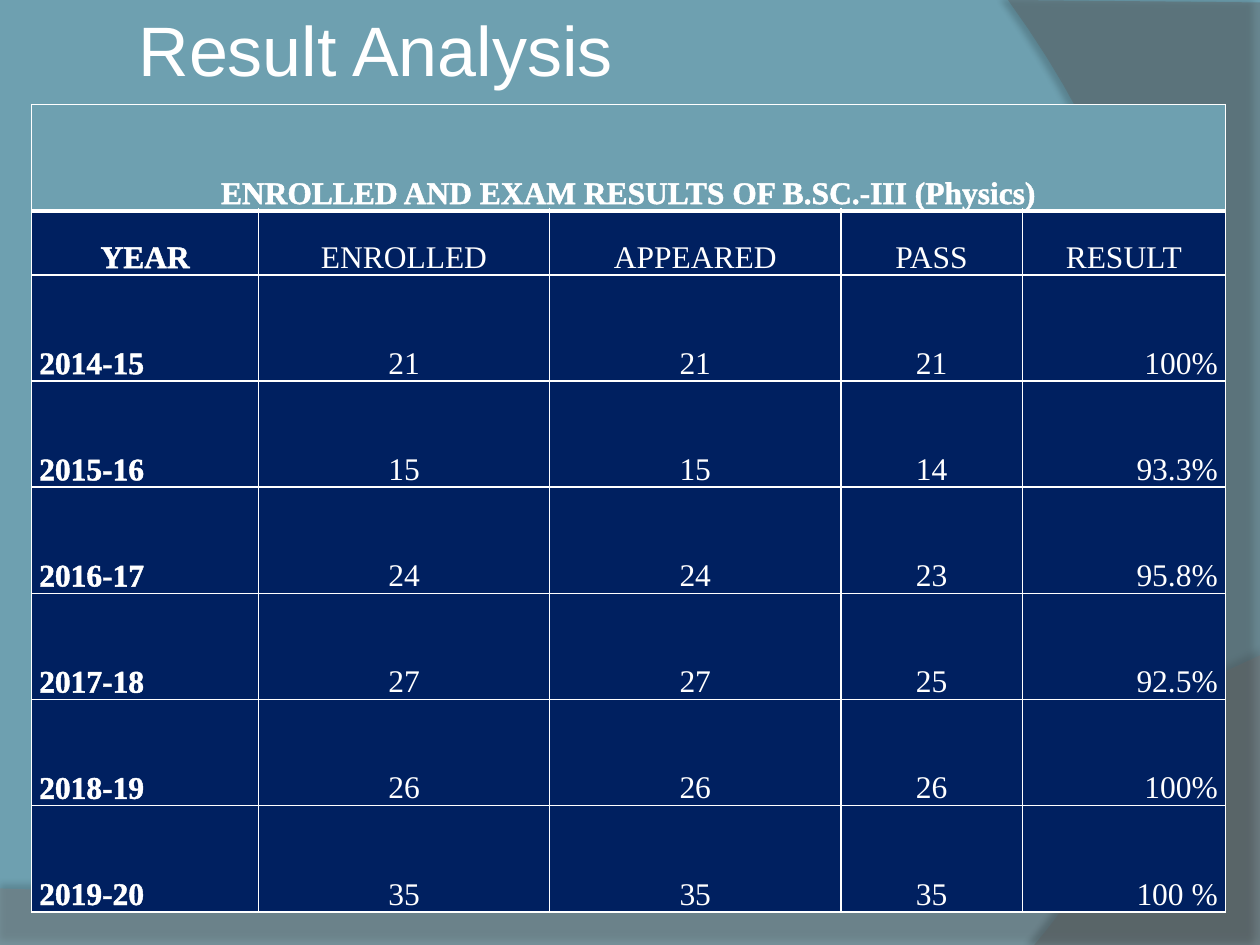
from lxml import etree
from pptx import Presentation
from pptx.dml.color import RGBColor
from pptx.enum.text import MSO_ANCHOR, MSO_AUTO_SIZE, PP_ALIGN
from pptx.oxml.ns import qn
from pptx.util import Cm, Pt

LEFT, CENTER, RIGHT = PP_ALIGN.LEFT, PP_ALIGN.CENTER, PP_ALIGN.RIGHT
TOP, BOTTOM = MSO_ANCHOR.TOP, MSO_ANCHOR.BOTTOM
NO_AUTOFIT = MSO_AUTO_SIZE.NONE
TITLE_ONLY = 5

# Content
TITLE = "Result Analysis"
CAPTION = "ENROLLED AND EXAM RESULTS OF B.SC.-III (Physics)"
HEADINGS = ["YEAR", "ENROLLED", "APPEARED", "PASS", "RESULT"]
RESULTS = [
    ["2014-15", "21", "21", "21", "100%"],
    ["2015-16", "15", "15", "14", "93.3%"],
    ["2016-17", "24", "24", "23", "95.8%"],
    ["2017-18", "27", "27", "25", "92.5%"],
    ["2018-19", "26", "26", "26", "100%"],
    ["2019-20", "35", "35", "35", "100 %"],
]

THEME = {
    "background": "6EA0B0", "cell": "002060", "text": "FFFFFF", "shadow": "000000",
    "title_font": "Arial", "title_size": 40,
    "table_font": "Times New Roman", "table_size": 18,
    "border": 1, "caption_border": 3, "caption_outline": 0.75, "year_outline": 0.53,
}

# Geometry in cm
PAGE_WIDTH, PAGE_HEIGHT = 25.4, 19.05
TABLE_LEFT, TABLE_TOP = 0.64, 2.11
COLUMN_WIDTHS = [4.57, 5.87, 5.87, 3.66, 4.09]
ROW_HEIGHT, HEADING_HEIGHT = 2.14, 1.29
COLUMN_ALIGNMENT = [LEFT, CENTER, CENTER, CENTER, RIGHT]

# Background swooshes: straight corners, then a curve from the last corner
SWOOSHES = [
    {"corners": [(0, 17.91), (0, 19.05), (25.4, 19.05), (25.4, 13.21)],
     "curve": [(14.2, 18.52), (9.93, 18.26), (0, 17.91)],
     "color": "7F7F7F", "opacity": 45,
     "shadow": {"opacity": 35, "blur": 4, "distance": 3.5, "angle": 270}},
    {"corners": [(25.4, 0.05), (25.4, 19.05), (20.85, 19.05)],
     "curve": [(23.75, 15.72), (25.86, 7.62), (20.32, 0)],
     "color": "5E5E5E", "opacity": 40,
     "shadow": {"opacity": 45, "blur": 4, "distance": 4, "angle": 180}},
]
CURVE_STEPS = 40


def rgb(name):
    return RGBColor.from_string(THEME[name])


def child(parent, tag, **attributes):
    return etree.SubElement(parent, qn(tag), {key: str(value) for key, value in attributes.items()})


def set_opacity(color, percent):
    child(color, "a:alpha", val=percent * 1000)


def line_element(tag, points):
    line = etree.Element(qn(tag), {"w": str(Pt(points))})
    child(child(line, "a:solidFill"), "a:srgbClr", val=THEME["text"])
    return line


def bezier(start, first, second, end):
    for step in range(1, CURVE_STEPS + 1):
        t = step / CURVE_STEPS
        weights = ((1 - t) ** 3, 3 * t * (1 - t) ** 2, 3 * t * t * (1 - t), t ** 3)
        yield tuple(sum(weight * point[axis] for weight, point
                        in zip(weights, (start, first, second, end))) for axis in (0, 1))


def add_swoosh(slide, swoosh):
    corners = swoosh["corners"]
    points = corners + list(bezier(corners[-1], *swoosh["curve"]))
    points = [(Cm(x), Cm(y)) for x, y in points]
    builder = slide.shapes.build_freeform(*points[0])
    builder.add_line_segments(points[1:], close=True)
    shape = builder.convert_to_shape()
    shape.fill.solid()
    shape.fill.fore_color.rgb = RGBColor.from_string(swoosh["color"])
    shape.line.fill.background()
    shape.shadow.inherit = False
    properties = shape._element.spPr
    set_opacity(properties.find(qn("a:solidFill"))[0], swoosh["opacity"])
    shadow = swoosh["shadow"]
    outer = child(properties.find(qn("a:effectLst")), "a:outerShdw",
                  blurRad=Pt(shadow["blur"]), dist=Pt(shadow["distance"]),
                  dir=shadow["angle"] * 60000, algn="ctr", rotWithShape=0)
    set_opacity(child(outer, "a:srgbClr", val=THEME["shadow"]), shadow["opacity"])


def format_font(font, kind, bold):
    font.name = THEME[kind + "_font"]
    font.size = Pt(THEME[kind + "_size"])
    font.color.rgb = rgb("text")
    font.bold = bold


def fill_cell(cell, text, alignment, outline):
    cell.vertical_anchor = BOTTOM
    cell.margin_left = cell.margin_right = Cm(0.15)
    cell.margin_top = cell.margin_bottom = 0
    para = cell.text_frame.paragraphs[0]
    para.alignment = alignment
    para.line_spacing = 1.07
    para.space_after = Pt(8)
    format_font(para.font, "table", bool(outline))
    span = para.add_run()
    span.text = text
    if outline:
        span.font._element.insert(0, line_element("a:ln", THEME[outline]))


def style_cell(cell, row):
    cell.fill.solid()
    cell.fill.fore_color.rgb = rgb("cell" if row else "background")
    widths = {"a:lnL": "border", "a:lnR": "border",
              "a:lnT": "caption_border" if row == 1 else "border",
              "a:lnB": "border" if row else "caption_border"}
    properties = cell._tc.get_or_add_tcPr()
    for position, (tag, width) in enumerate(widths.items()):
        properties.insert(position, line_element(tag, THEME[width]))


def add_results_table(slide):
    heights = [ROW_HEIGHT, HEADING_HEIGHT] + [ROW_HEIGHT] * len(RESULTS)
    table = slide.shapes.add_table(
        len(heights), len(COLUMN_WIDTHS), Cm(TABLE_LEFT), Cm(TABLE_TOP),
        Cm(sum(COLUMN_WIDTHS)), Cm(sum(heights))).table
    table.first_row = table.horz_banding = False
    for column, width in zip(table.columns, COLUMN_WIDTHS):
        column.width = Cm(width)
    for table_row, height in zip(table.rows, heights):
        table_row.height = Cm(height)
    last_column = len(COLUMN_WIDTHS) - 1
    table.cell(0, 0).merge(table.cell(0, last_column))
    fill_cell(table.cell(0, 0), CAPTION, CENTER, "caption_outline")
    for row, values in enumerate([HEADINGS] + RESULTS, start=1):
        for column, text in enumerate(values):
            alignment = CENTER if row == 1 else COLUMN_ALIGNMENT[column]
            outline = None if column else "year_outline"
            fill_cell(table.cell(row, column), text, alignment, outline)
    for row in range(len(heights)):
        for column in range(len(COLUMN_WIDTHS)):
            style_cell(table.cell(row, column), row)


def format_title(box):
    box.left, box.top, box.width, box.height = Cm(2.54), 0, Cm(15.88), Cm(1.96)
    frame = box.text_frame
    frame.text = TITLE
    frame.word_wrap = True
    frame.auto_size = NO_AUTOFIT
    frame.vertical_anchor = TOP
    para = frame.paragraphs[0]
    para.alignment = LEFT
    format_font(para.font, "title", False)


def main():
    deck = Presentation()
    deck.slide_width, deck.slide_height = Cm(PAGE_WIDTH), Cm(PAGE_HEIGHT)
    page = deck.slides.add_slide(deck.slide_layouts[TITLE_ONLY])
    page.background.fill.solid()
    page.background.fill.fore_color.rgb = rgb("background")
    for swoosh in SWOOSHES:
        add_swoosh(page, swoosh)
    add_results_table(page)
    format_title(page.shapes.title)
    deck.save("out.pptx")


if __name__ == "__main__":
    main()
